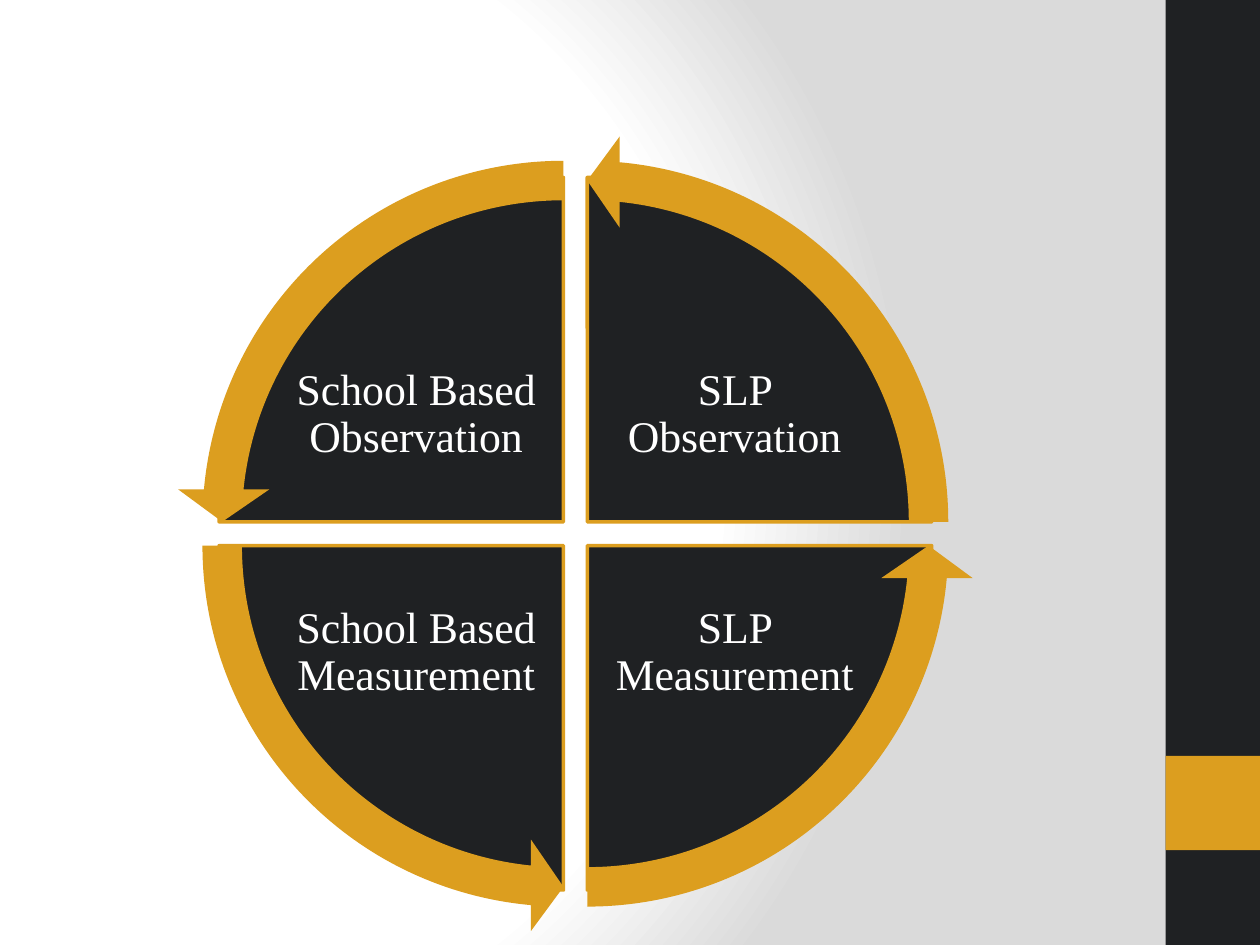
import pptx
import pptx.dml.color
import pptx.enum.shapes
import pptx.enum.text
import pptx.oxml
import pptx.oxml.ns
import pptx.util

Cm = pptx.util.Cm
Pt = pptx.util.Pt
RGBColor = pptx.dml.color.RGBColor
Shapes = pptx.enum.shapes.MSO_SHAPE

DARK = RGBColor(0x1F, 0x21, 0x23)
GOLD = RGBColor(0xDC, 0x9E, 0x1F)
WHITE = RGBColor(0xFF, 0xFF, 0xFF)
GREY = RGBColor(0xDA, 0xDA, 0xDA)
FONT = "Times New Roman"

QUADRANTS = [
    ("SLP Observation", 1, -1, 270),
    ("SLP Measurement", 1, 1, 0),
    ("School Based Measurement", -1, 1, 90),
    ("School Based Observation", -1, -1, 180),
]


def angle(degrees):
    """Convert degrees to the unit of shape adjustments."""
    return degrees % 360 * 0.6


def add_filled(shapes, kind, box, color, adjustments=()):
    """Add a preset shape with a plain fill and no line, in centimetres."""
    shape = shapes.add_shape(kind, *(Cm(length) for length in box))
    shape.shadow.inherit = False
    shape.fill.solid()
    shape.fill.fore_color.rgb = color
    shape.line.fill.background()
    for index, value in enumerate(adjustments):
        shape.adjustments[index] = value
    return shape


def centred(x, y, width, height):
    """Return the box of the given size around a point."""
    return x - width / 2, y - height / 2, width, height


def set_background(slide):
    """Fill the background with a radial gradient from white to grey."""
    stops = "".join(
        f'<a:gs pos="{position * 1000}"><a:srgbClr val="{color}"/></a:gs>'
        for position, color in [(0, WHITE), (75, WHITE), (100, GREY)]
    )
    background = pptx.oxml.parse_xml(
        f'<p:bg {pptx.oxml.ns.nsdecls("p", "a")}><p:bgPr>'
        f'<a:gradFill rotWithShape="1"><a:gsLst>{stops}</a:gsLst>'
        '<a:path path="circle">'
        '<a:fillToRect l="20000" t="50000" r="100000" b="50000"/>'
        "</a:path></a:gradFill><a:effectLst/></p:bgPr></p:bg>"
    )
    slide.element.cSld.insert(0, background)


def add_sidebar(slide, left, top, width, height):
    """Add the dark side band with its gold square."""
    add_filled(slide.shapes, Shapes.RECTANGLE, (left, top, width, height), DARK)
    square = (left, top + height * 0.8, width, width)
    add_filled(slide.shapes, Shapes.RECTANGLE, square, GOLD)


def add_label(shapes, text, box):
    """Add the centred caption of one quadrant."""
    frame = shapes.add_textbox(*(Cm(length) for length in box)).text_frame
    frame.word_wrap = True
    frame.vertical_anchor = pptx.enum.text.MSO_ANCHOR.MIDDLE
    frame.margin_left = frame.margin_right = Cm(0.08)
    frame.margin_top = frame.margin_bottom = Cm(0.08)
    paragraph = frame.paragraphs[0]
    paragraph.alignment = pptx.enum.text.PP_ALIGN.CENTER
    paragraph.line_spacing = 0.9
    run = paragraph.add_run()
    run.text = text
    run.font.name = FONT
    run.font.size = Pt(25)
    run.font.color.rgb = WHITE


def add_cycle(slide, left, top, size):
    """Add four captioned quarter pies, ringed by arrows, in a square box."""
    shapes = slide.shapes.add_group_shape().shapes
    shift = 0.24
    ring = size - 2 * shift
    pie = ring * 0.89
    head = 5.46
    middle_x, middle_y = left + size / 2, top + size / 2
    for text, side_x, side_y, start in QUADRANTS:
        x, y = middle_x + side_x * shift, middle_y + side_y * shift
        quarter = add_filled(shapes, Shapes.PIE, centred(x, y, pie, pie), DARK,
                             (angle(start), angle(start + 90)))
        quarter.line.color.rgb = GOLD
        quarter.line.width = Pt(2)
        add_label(shapes, text, centred(middle_x + side_x * 3.21,
                                        middle_y + side_y * 2.4, 5.13, 3.81))
    for _, side_x, side_y, start in QUADRANTS:
        x, y = middle_x + side_x * shift, middle_y + side_y * shift
        add_filled(shapes, Shapes.LEFT_CIRCULAR_ARROW, centred(x, y, ring, ring), GOLD,
                   (5.1 / 100, angle(head), angle(start + head),
                    angle(start + 90), 5.9 / 100))


def main():
    """Build and save the presentation."""
    presentation = pptx.Presentation()
    presentation.slide_width = Cm(25.4)
    presentation.slide_height = Cm(19.05)
    slide = presentation.slides.add_slide(presentation.slide_layouts[6])
    set_background(slide)
    add_sidebar(slide, 23.5, 0, 1.9, 19.05)
    add_cycle(slide, 3.56, 2.72, 16.08)
    presentation.save("out.pptx")


if __name__ == "__main__":
    main()
